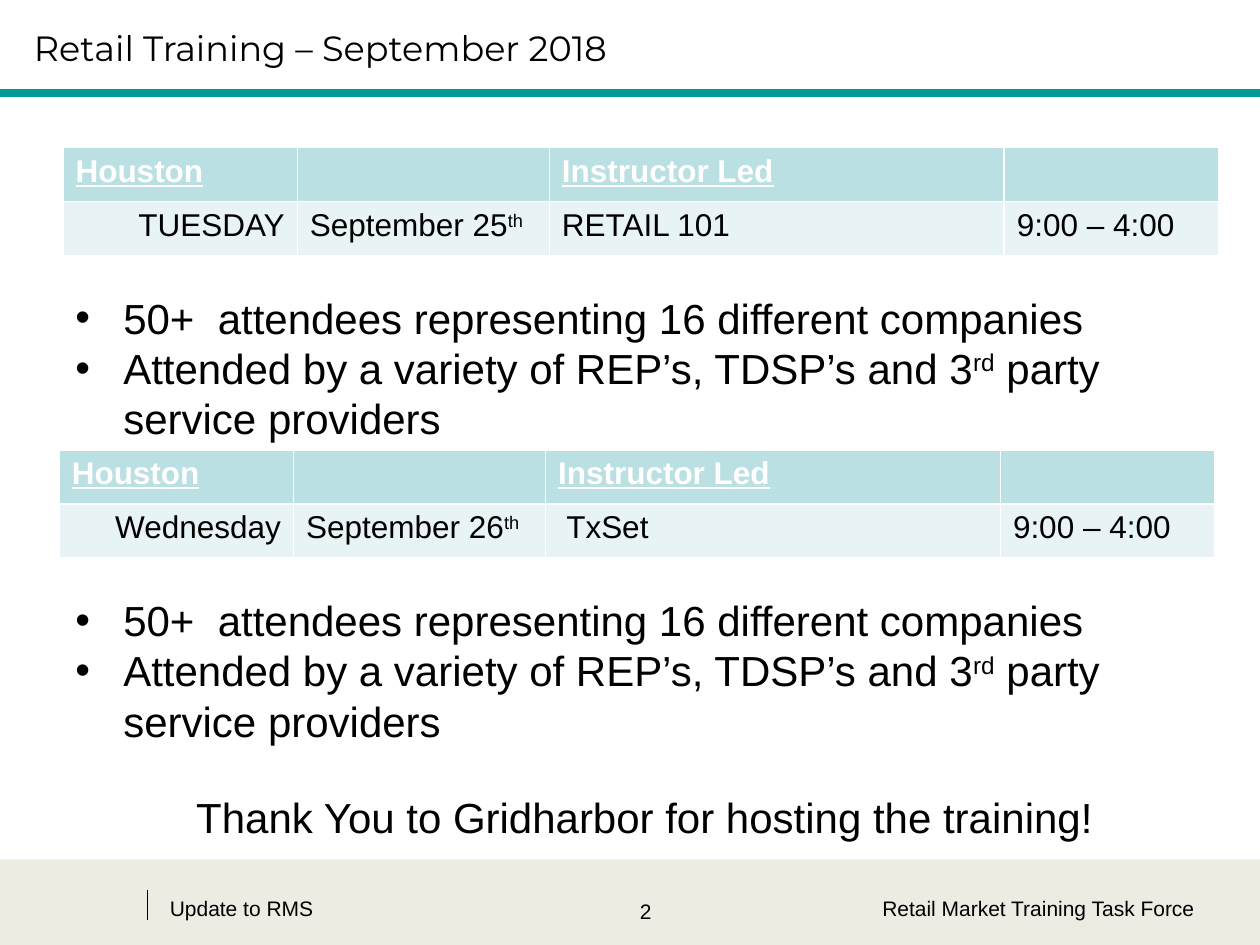
from lxml.etree import SubElement
from pptx import Presentation
from pptx.dml.color import RGBColor
from pptx.enum.shapes import MSO_CONNECTOR, MSO_SHAPE
from pptx.enum.text import MSO_ANCHOR, PP_ALIGN
from pptx.oxml.ns import qn
from pptx.util import Inches, Pt

BLACK = RGBColor(0x00, 0x00, 0x00)
WHITE = RGBColor(0xFF, 0xFF, 0xFF)
TEAL = RGBColor(0x00, 0x99, 0x99)
SAND = RGBColor(0xEC, 0xEC, 0xE2)
HEAD = RGBColor(0xBB, 0xE0, 0xE3)
PALE = RGBColor(0xE7, 0xF3, 0xF4)

COLS = [1.86, 2, 3.61, 1.7]
ROW = 0.43
TITLES = ["Houston", "", "Instructor Led", ""]
TIME = "9:00 – 4:00"
POINTS = [
    ["50+  attendees representing 16 different companies"],
    ["Attended by a variety of REP’s, TDSP’s and 3", "rd",
     " party service providers"],
]


class Page:
    def __init__(self, slide, font="Arial"):
        self.slide = slide
        self.font = font

    def runs(self, para, parts, size, color=BLACK, font=None, head=False):
        """Add the parts in turn; every second one is raised."""
        for i, part in enumerate(parts):
            run = para.add_run()
            run.text = part
            run.font.name = font or self.font
            run.font.size = Pt(size)
            run.font.color.rgb = color
            run.font.bold = run.font.underline = head
            if i % 2:
                run.font._element.set("baseline", "30000")

    def text(self, x, y, w, h, paras, size, align=PP_ALIGN.LEFT, font=None,
             anchor=MSO_ANCHOR.TOP, bullet=False):
        box = self.slide.shapes.add_textbox(
            Inches(x), Inches(y), Inches(w), Inches(h))
        frame = box.text_frame
        frame.word_wrap = True
        frame.vertical_anchor = anchor
        for i, parts in enumerate(paras):
            para = frame.add_paragraph() if i else frame.paragraphs[0]
            para.alignment = align
            self.runs(para, parts, size, font=font)
            if bullet:
                self.bullet(para)

    def bullet(self, para):
        props = para._p.get_or_add_pPr()
        props.set("marL", str(Inches(0.38)))
        props.set("indent", str(-Inches(0.38)))
        SubElement(props, qn("a:buFont")).set("typeface", self.font)
        SubElement(props, qn("a:buChar")).set("char", "•")

    def rect(self, x, y, w, h, color):
        shape = self.slide.shapes.add_shape(
            MSO_SHAPE.RECTANGLE, Inches(x), Inches(y), Inches(w), Inches(h))
        shape.shadow.inherit = False
        shape.fill.solid()
        shape.fill.fore_color.rgb = color
        shape.line.fill.background()

    def line(self, x1, y1, x2, y2, color, width):
        line = self.slide.shapes.add_connector(
            MSO_CONNECTOR.STRAIGHT,
            Inches(x1), Inches(y1), Inches(x2), Inches(y2))
        line.line.color.rgb = color
        line.line.width = Pt(width)
        SubElement(line._element.spPr, qn("a:effectLst"))

    def table(self, x, y, entry):
        """Add a header row and one entry; the table style gives the borders."""
        table = self.slide.shapes.add_table(
            2, len(COLS), Inches(x), Inches(y),
            Inches(sum(COLS)), Inches(2 * ROW)).table
        for col, width in zip(table.columns, COLS):
            col.width = Inches(width)
        for c, (title, parts) in enumerate(zip(TITLES, entry)):
            self.cell(table.cell(0, c), [title] if title else [], True)
            self.cell(table.cell(1, c), parts, False)
        table.cell(1, 0).text_frame.paragraphs[0].alignment = PP_ALIGN.RIGHT

    def cell(self, cell, parts, head):
        cell.fill.solid()
        cell.fill.fore_color.rgb = HEAD if head else PALE
        self.runs(cell.text_frame.paragraphs[0], parts, 18,
                  WHITE if head else BLACK, head=head)


def main():
    deck = Presentation()
    deck.slide_width, deck.slide_height = Inches(10), Inches(7.5)
    page = Page(deck.slides.add_slide(deck.slide_layouts[6]))

    page.rect(0, 6.82, 10, 0.68, SAND)
    page.line(1.17, 7.06, 1.17, 7.3, BLACK, 0.75)
    page.line(0, 0.74, 10, 0.74, TEAL, 4.5)
    page.text(0.17, 0, 9.5, 0.75, [["Retail Training – September 2018"]], 20,
              font="Montserrat", anchor=MSO_ANCHOR.MIDDLE)

    page.text(1.25, 7.06, 2.33, 0.5, [["Update to RMS"]], 12)
    page.text(3.75, 7.08, 2.75, 0.5, [["2"]], 12, PP_ALIGN.CENTER)
    page.text(6.83, 7.06, 2.75, 0.5,
              [["Retail Market Training Task Force"]], 12, PP_ALIGN.RIGHT)

    days = [
        (0.5, 1.17, "TUESDAY", "September 25", "RETAIL 101"),
        (0.47, 3.57, "Wednesday", "September 26", " TxSet"),
    ]
    for x, y, day, date, course in days:
        page.text(0.5, y + 1.1, 9.25, 1.3, POINTS, 24, bullet=True)
        page.table(x, y, [[day], [date, "th"], [course], [TIME]])

    page.text(0.49, 6.23, 9.25, 0.51,
              [["Thank You to Gridharbor for hosting the training!"]], 24,
              PP_ALIGN.CENTER)
    deck.save("out.pptx")


if __name__ == "__main__":
    main()
